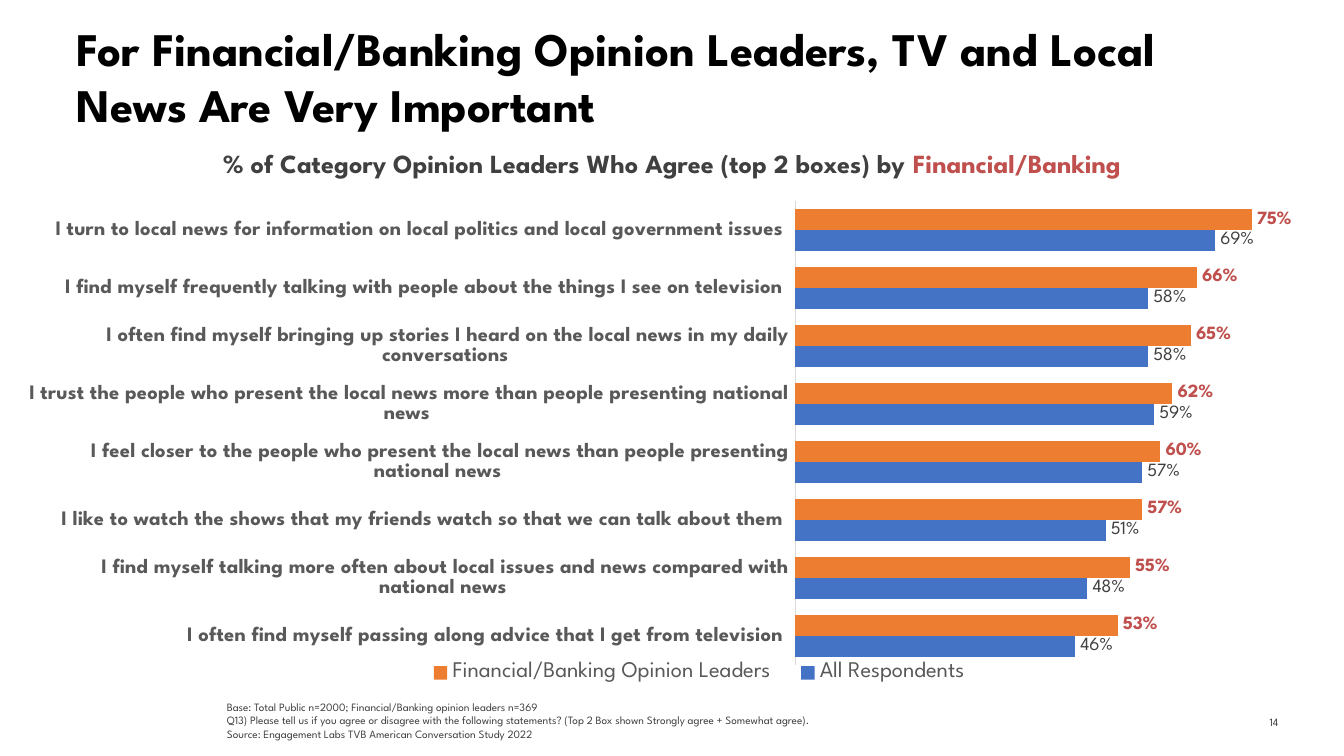
from dataclasses import dataclass

from lxml import etree
from pptx import Presentation
from pptx.chart.data import CategoryChartData
from pptx.dml.color import RGBColor
from pptx.enum.chart import (XL_CHART_TYPE, XL_LABEL_POSITION,
                             XL_LEGEND_POSITION, XL_TICK_LABEL_POSITION,
                             XL_TICK_MARK)
from pptx.enum.text import MSO_ANCHOR, PP_ALIGN
from pptx.oxml.ns import qn
from pptx.util import Inches, Pt

LEFT, CENTER, RIGHT = PP_ALIGN.LEFT, PP_ALIGN.CENTER, PP_ALIGN.RIGHT
TOP, MIDDLE, BOTTOM = MSO_ANCHOR.TOP, MSO_ANCHOR.MIDDLE, MSO_ANCHOR.BOTTOM
BARS = XL_CHART_TYPE.BAR_CLUSTERED
OUTSIDE = XL_LABEL_POSITION.OUTSIDE_END
LOW = XL_LEGEND_POSITION.BOTTOM
NO_TICK = XL_TICK_MARK.NONE
NO_LABEL = XL_TICK_LABEL_POSITION.NONE

WIDTH = 10
HEIGHT = WIDTH * 9 / 16
FACE = "League Spartan"
COLORS = {"black": "000000", "dark": "404040", "page": "3C3C3A",
          "gray": "595959", "rule": "D9D9D9", "red": "C0504D",
          "blue": "4472C4", "orange": "ED7D31"}


@dataclass
class Block:
    box: tuple
    lines: list  # each line is a list of (text, color) runs
    size: float
    bold: bool = False
    align: int = LEFT
    anchor: int = TOP
    inset: float = 0.05
    wrap: bool = True


@dataclass
class Group:
    name: str
    values: tuple
    fill: str
    label: str
    bold: bool


BLOCKS = [
    Block((9.02, 5.22, 0.59, 0.3), [[("14", "page")]], 6,
          align=RIGHT, anchor=MIDDLE),
    Block((0.47, 0.15, 9.02, 0.79),
          [[("For Financial/Banking Opinion Leaders, TV and Local News "
             "Are Very Important", "black")]], 25, bold=True, inset=0),
    Block((1.59, 5.16, 8.14, 0.4),
          [[("Base: Total Public n=2000; Financial/Banking opinion leaders "
             "n=369", "dark")],
           [("Q13) Please tell us if you agree or disagree with the following "
             "statements? (Top 2 Box shown Strongly agree + Somewhat agree).",
             "dark")],
           [("Source: Engagement Labs TVB American Conversation Study 2022",
             "dark")]], 6, anchor=BOTTOM),
    Block((1.16, 1.05, 7.68, 0.34),
          [[("% of Category Opinion Leaders Who Agree (top 2 boxes) by ",
             "dark"), ("Financial/Banking", "red")]],
          14, bold=True, align=CENTER, wrap=False),
]

# Bar charts list categories from the bottom up
TOPICS = [
    "I often find myself passing along advice that I get from television ",
    "I find myself talking more often about local issues and news compared "
    "with national news ",
    "I like to watch the shows that my friends watch so that we can talk "
    "about them ",
    "I feel closer to the people who present the local news than people "
    "presenting national news ",
    "I trust the people who present the local news more than people "
    "presenting national news ",
    "I often find myself bringing up stories I heard on the local news in my "
    "daily conversations ",
    "I find myself frequently talking with people about the things I see on "
    "television ",
    "I turn to local news for information on local politics and local "
    "government issues ",
]
GROUPS = [
    Group("All Respondents",
          (0.46, 0.48, 0.51, 0.57, 0.59, 0.58, 0.58, 0.69),
          "blue", "dark", False),
    Group("Financial/Banking Opinion Leaders",
          (0.53, 0.55, 0.57, 0.6, 0.62, 0.65, 0.66, 0.75),
          "orange", "red", True),
]


def paint(name: str) -> RGBColor:
    return RGBColor.from_string(COLORS[name])


def style(font, size: float, color: str = "", bold: bool = False) -> None:
    font.name, font.size, font.bold = FACE, Pt(size), bold
    if color:
        font.color.rgb = paint(color)


def write(slide, block: Block) -> None:
    shape = slide.shapes.add_textbox(*map(Inches, block.box))
    frame = shape.text_frame
    frame.word_wrap = block.wrap
    frame.vertical_anchor = block.anchor
    frame.margin_top = Inches(block.inset)
    for i, line in enumerate(block.lines):
        para = frame.add_paragraph() if i else frame.paragraphs[0]
        para.alignment = block.align
        style(para.font, block.size, bold=block.bold)
        for text, color in line:
            run = para.add_run()
            run.text = text
            run.font.color.rgb = paint(color)


def place(parent, index: int, inner: bool, area: tuple) -> None:
    """Fix a chart part at x, y, w, h, as shares of the chart."""
    for old in parent.findall(qn("c:layout")):
        parent.remove(old)
    layout = etree.Element(qn("c:layout"))
    parent.insert(index, layout)
    manual = etree.SubElement(layout, qn("c:manualLayout"))
    items = [("layoutTarget", "inner")] if inner else []
    items += [("xMode", "edge"), ("yMode", "edge"), *zip("xywh", area)]
    for tag, value in items:
        etree.SubElement(manual, qn("c:" + tag)).set("val", str(value))


def plot(slide, box: tuple) -> None:
    data = CategoryChartData(number_format="0%")
    data.categories = TOPICS
    for group in GROUPS:
        data.add_series(group.name, group.values)
    chart = slide.shapes.add_chart(BARS, *map(Inches, box), data).chart
    chart.has_title = False
    style(chart.font, 10, "black")

    # Axes
    topic = chart.category_axis
    topic.major_tick_mark = topic.minor_tick_mark = NO_TICK
    topic.format.line.color.rgb = paint("rule")
    topic.format.line.width = Pt(0.75)
    style(topic.tick_labels.font, 11, "gray", True)
    scale = chart.value_axis
    scale.minimum_scale, scale.maximum_scale = 0, 0.8
    scale.has_major_gridlines = False
    scale.tick_label_position = NO_LABEL
    scale.visible = False

    # Bars and their labels
    bars = chart.plots[0]
    bars.gap_width, bars.overlap = 78, 0
    bars.vary_by_categories = False
    for series, group in zip(bars.series, GROUPS):
        series.format.fill.solid()
        series.format.fill.fore_color.rgb = paint(group.fill)
        labels = series.data_labels
        labels.show_value = True
        labels.number_format = "0%"
        labels.number_format_is_linked = False
        labels.position = OUTSIDE
        style(labels.font, 10, group.label, group.bold)

    # Legend and fixed positions
    chart.has_legend = True
    legend = chart.legend
    legend.position = LOW
    legend.include_in_layout = False
    style(legend.font, 12, "gray")
    root = chart.element
    place(root.find(".//" + qn("c:plotArea")), 0, True,
          (0.6, 0.02, 0.38, 0.88))
    place(root.find(".//" + qn("c:legend")), 1, False,
          (0.3, 0.88, 0.45, 0.07))


def main() -> None:
    deck = Presentation()
    deck.slide_width, deck.slide_height = Inches(WIDTH), Inches(HEIGHT)
    slide = deck.slides.add_slide(deck.slide_layouts[6])
    for block in BLOCKS:
        write(slide, block)
    plot(slide, (0.2, 1.42, 9.53, 3.92))
    deck.save("out.pptx")


if __name__ == "__main__":
    main()
